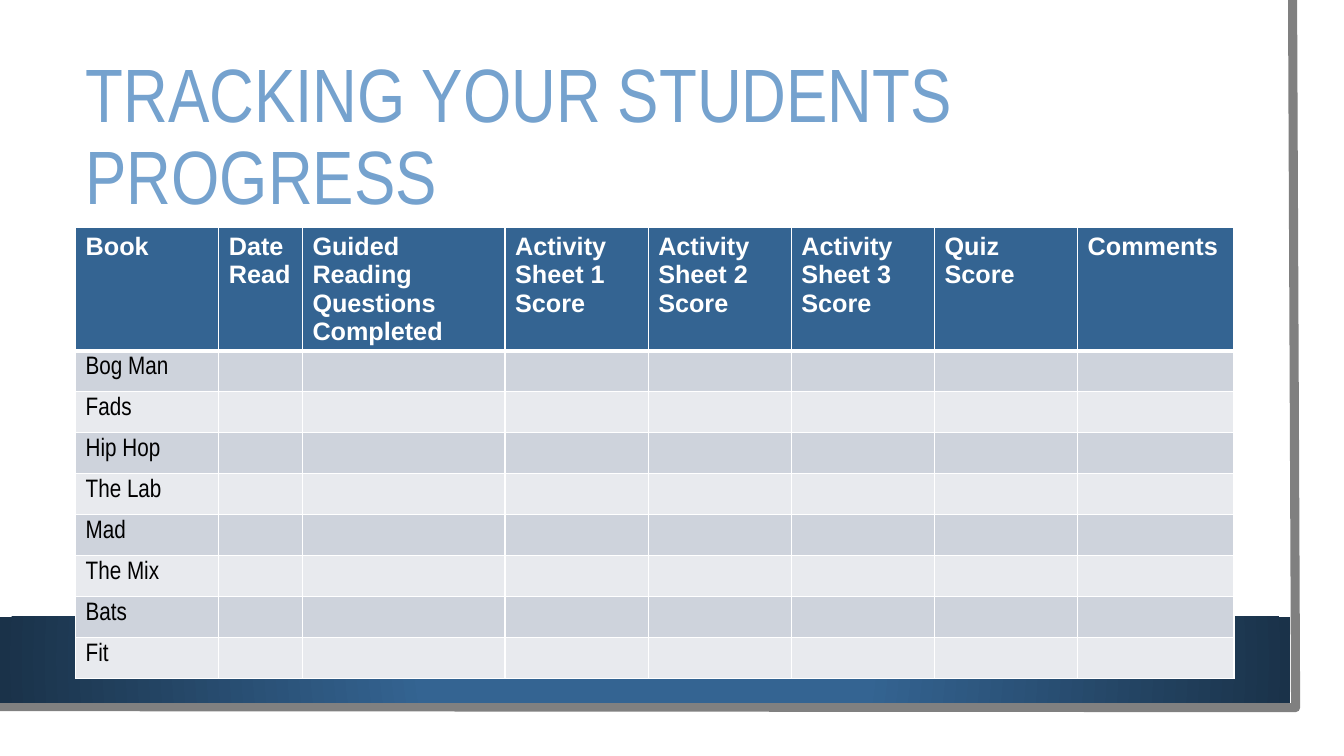
from lxml import etree
from pptx import Presentation
from pptx import util as u
from pptx.dml.color import RGBColor
from pptx.enum import shapes, text
from pptx.oxml import parse_xml
from pptx.oxml.ns import qn

TITLE = "TRACKING YOUR STUDENTS PROGRESS"
HEADS = ["Book", "Date Read", "Guided Reading Questions Completed",
         "Activity Sheet 1 Score", "Activity Sheet 2 Score",
         "Activity Sheet 3 Score", "Quiz Score", "Comments"]
BOOKS = ["Bog Man", "Fads", "Hip Hop", "The Lab", "Mad", "The Mix", "Bats", "Fit"]
WIDTHS = [1.42, 0.83, 2.01, 1.42, 1.42, 1.42, 1.42, 1.55]
HEAD_H, ROW_H = 1.22, 0.407
EDGE = [(12.82, 0), (12.85, 7.02), (-0.03, 7.01)]
C = {"white": "FFFFFF", "black": "000000", "blue": "346492", "navy": "1A3249",
     "sky": "75A2CE", "grey": "808080", "odd": "CED3DC", "even": "E8EAEE"}
NS = 'xmlns:a="http://schemas.openxmlformats.org/drawingml/2006/main"'


def rgb(name):
    return RGBColor.from_string(C[name])


def box(left, top, width, height):
    return [u.Inches(n) for n in (left, top, width, height)]


def style(par, face, size, color, bold=False):
    font = par.font
    font.name, font.size, font.bold = face, u.Pt(size), bold
    font.color.rgb = rgb(color)


def rect(slide, *place):
    shape = slide.shapes.add_shape(shapes.MSO_SHAPE.RECTANGLE, *box(*place))
    shape.shadow.inherit = False
    shape.line.fill.background()
    shape.fill.solid()
    shape.fill.fore_color.rgb = rgb("white")
    return shape


def glow(shape):
    props = shape.element.spPr
    props.replace(props.find(qn("a:solidFill")), parse_xml(
        f'<a:gradFill {NS} rotWithShape="1"><a:gsLst>'
        f'<a:gs pos="34000"><a:srgbClr val="{C["blue"]}"/></a:gs>'
        f'<a:gs pos="100000"><a:srgbClr val="{C["navy"]}"/></a:gs></a:gsLst>'
        '<a:path path="circle"><a:fillToRect l="50000" t="50000" r="50000" b="50000"/>'
        '</a:path></a:gradFill>'))


def border(cell, base):
    props = cell._tc.get_or_add_tcPr()
    for spot, (side, width) in enumerate(zip("LRTB", (1, 1, 1, base))):
        line = etree.Element(qn(f"a:ln{side}"), w=str(u.Pt(width)))
        fill = etree.SubElement(line, qn("a:solidFill"))
        etree.SubElement(fill, qn("a:srgbClr"), val=C["white"])
        props.insert(spot, line)


def frame(slide):
    rect(slide, 0, 0, 13.1, 7.27)
    pen = slide.shapes.build_freeform(*[u.Inches(n) for n in EDGE[0]])
    pen.add_line_segments([(u.Inches(x), u.Inches(y)) for x, y in EDGE[1:]], close=False)
    edge = pen.convert_to_shape()
    edge.shadow.inherit = False
    edge.fill.background()
    edge.line.color.rgb = rgb("grey")
    edge.line.width = u.Pt(6.5)
    glow(rect(slide, 0, 6.12, 12.8, 0.85))


def head(slide):
    title = slide.shapes.title
    title.element.getparent().append(title.element)
    title.left, title.top, title.width, title.height = box(0.75, 0.75, 11.37, 1.26)
    body = title.text_frame
    body.text = TITLE
    body.word_wrap = True
    body.auto_size = text.MSO_AUTO_SIZE.NONE
    body.vertical_anchor = text.MSO_ANCHOR.MIDDLE
    par = body.paragraphs[0]
    par.alignment = text.PP_ALIGN.LEFT
    par.line_spacing = 0.9
    style(par, "Arial Narrow", 54, "sky")


def grid(slide):
    rows = [HEADS] + [[book] + [""] * (len(HEADS) - 1) for book in BOOKS]
    place = box(0.75, 2.26, sum(WIDTHS), HEAD_H + ROW_H * len(BOOKS))
    table = slide.shapes.add_table(len(rows), len(HEADS), *place).table
    for col, width in zip(table.columns, WIDTHS):
        col.width = u.Inches(width)
    for r, row in enumerate(rows):
        table.rows[r].height = u.Inches(ROW_H if r else HEAD_H)
        shade = ("odd" if r % 2 else "even") if r else "blue"
        for c, word in enumerate(row):
            cell = table.cell(r, c)
            cell.text = word
            cell.fill.solid()
            cell.fill.fore_color.rgb = rgb(shade)
            border(cell, 1 if r else 3)
            par = cell.text_frame.paragraphs[0]
            if r:
                style(par, "Arial Narrow", 18, "black")
            else:
                style(par, "Arial", 18, "white", True)


def main():
    deck = Presentation()
    deck.slide_width, deck.slide_height = u.Inches(13.33), u.Inches(7.5)
    slide = deck.slides.add_slide(deck.slide_layouts[5])
    frame(slide)
    head(slide)
    grid(slide)
    deck.save("out.pptx")


if __name__ == "__main__":
    main()
